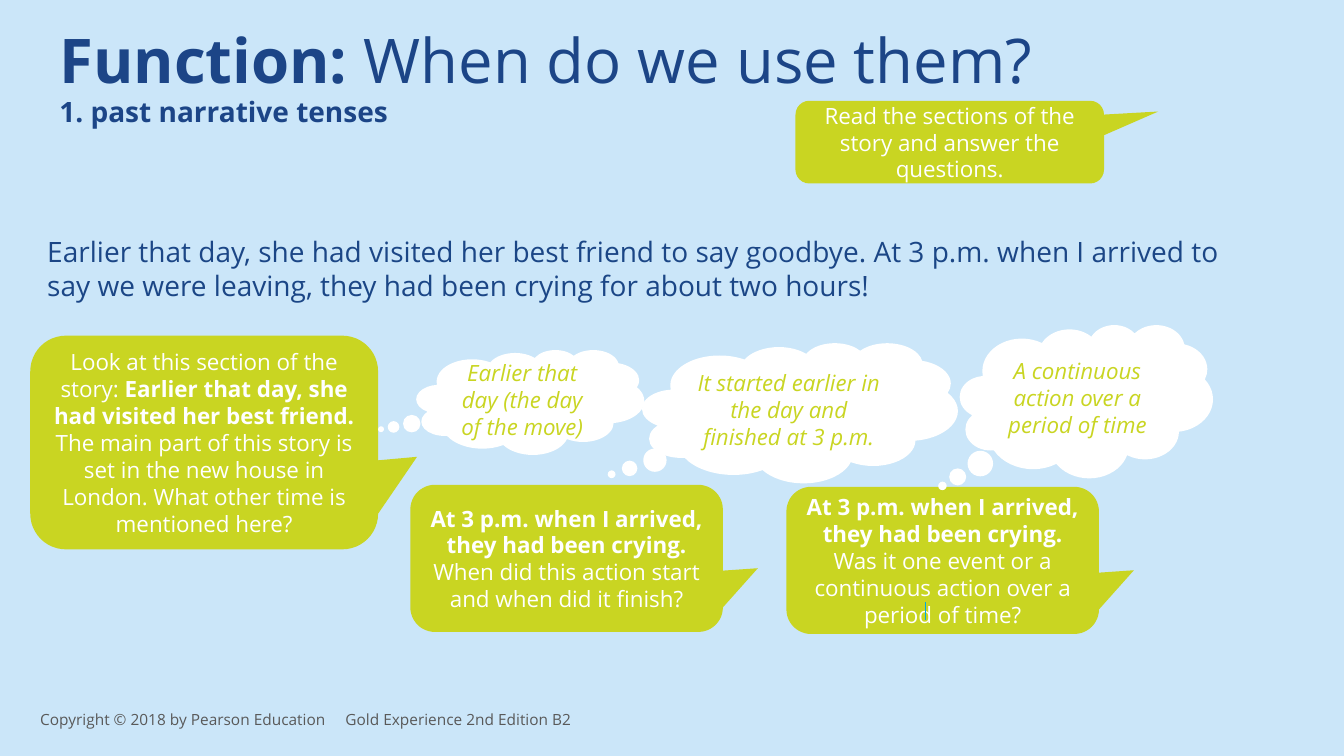
from pptx import Presentation
from pptx.dml.color import RGBColor
from pptx.enum.shapes import MSO_CONNECTOR as Connector, MSO_SHAPE as Shape
from pptx.enum.text import MSO_ANCHOR as Anchor, PP_ALIGN as Align
from pptx.oxml.ns import qn
from pptx.util import Inches, Pt
from lxml import etree

SKY = RGBColor(0xCB, 0xE6, 0xF9)
NAVY = RGBColor(0x1C, 0x45, 0x87)
STORY_BLUE = RGBColor(0x1B, 0x46, 0x86)
LIME = RGBColor(0xC9, 0xD5, 0x22)
WHITE = RGBColor(0xFF, 0xFF, 0xFF)
GREY = RGBColor(0x59, 0x59, 0x59)
CYAN = RGBColor(0x00, 0xA7, 0xE3)

QUESTION_TAIL = (0.612, 0.067, 0.167)
INSTRUCTION_TAIL = (0.676, -0.37, 0.167)
CRYING = ("At 3 p.m. when I arrived, they had been crying.", True)

QUESTIONS = [
    ((0.3, 3.33, 3.45, 2.12), QUESTION_TAIL, [
        ("Look at this section of the story: ", False),
        ("Earlier that day, she had visited her best friend. ", True),
        ("The main part of this story is set in the new house in London. "
         "What other time is mentioned here?", False)]),
    ((4.07, 4.81, 3.1, 1.46), QUESTION_TAIL, [
        CRYING, (" When did this action start and when did it finish?", False)]),
    ((7.8, 4.83, 3.1, 1.46), QUESTION_TAIL, [
        CRYING, (" Was it one event or a continuous action over a period of time?", False)]),
    ((7.89, 1, 3.06, 0.82), INSTRUCTION_TAIL, [
        ("Read the sections of the story and answer the questions.", False)]),
]
ANSWERS = [
    ((4.13, 3.47, 2.26, 1.04), (-0.655, 0.258),
     "Earlier that day (the day of the move)"),
    ((6.37, 3.4, 3.13, 1.39), (-0.597, 0.439),
     "It started earlier in the day and finished at 3 p.m."),
    ((9.52, 3.22, 2.51, 1.52), (-0.569, 0.553),
     "A continuous action over a period of time"),
]


def write(frame, runs, size, color, italic=False, **layout):
    frame.word_wrap = True
    paragraph = frame.paragraphs[0]
    for name, value in layout.items():
        setattr(paragraph, name, value)
    for words, bold in runs:
        run = paragraph.add_run()
        run.text = words
        look = {"name": "Open Sans", "size": Pt(size), "bold": bold, "italic": italic}
        for name, value in look.items():
            setattr(run.font, name, value)
        run.font.color.rgb = color


def add_label(slide, box, runs, size, color, **layout):
    frame = slide.shapes.add_textbox(*map(Inches, box)).text_frame
    write(frame, runs, size, color, **layout)
    return frame


def add_callout(slide, kind, box, tail, fill, runs, color, italic=False):
    callout = slide.shapes.add_shape(kind, *map(Inches, box))
    callout.shadow.inherit = False
    callout.fill.solid()
    callout.fill.fore_color.rgb = fill
    callout.line.fill.background()
    for index, value in enumerate(tail):
        callout.adjustments[index] = value
    callout.text_frame.vertical_anchor = Anchor.MIDDLE
    write(callout.text_frame, runs, 16, color, italic, alignment=Align.CENTER)


def add_heading(slide, left, top):
    add_label(slide, (left, top, 12.24, 1.44),
              [("Function: ", True), ("When do we use them?", False)],
              44, NAVY, line_spacing=0.9)
    add_label(slide, (left, top + 0.68, 10.1, 0.8),
              [("1. past narrative tenses", True)], 20, NAVY, line_spacing=0.9)


def add_story(slide, box):
    add_label(slide, box, [(
        "Earlier that day, she had visited her best friend to say goodbye. "
        "At 3 p.m. when I arrived to say we were leaving, "
        "they had been crying for about two hours!", False)], 20, STORY_BLUE)


def add_footer(slide, box):
    frame = add_label(slide, box, [(
        "Copyright © 2018 by Pearson Education     Gold Experience 2nd Edition B2",
        False)], 11, GREY)
    frame.vertical_anchor = Anchor.MIDDLE
    frame.margin_top = frame.margin_bottom = Inches(0.1)


def add_tick(slide, x, bottom, height):
    tick = slide.shapes.add_connector(
        Connector.STRAIGHT, *map(Inches, (x, bottom, x, bottom - height)))
    tick.line.color.rgb = CYAN
    tick.line.width = Pt(0.75)
    etree.SubElement(tick._element.spPr, qn("a:effectLst"))


def add_dialogue(slide):
    *story_questions, instruction = QUESTIONS
    for (box, tail, runs), (cloud_box, cloud_tail, answer) in zip(story_questions, ANSWERS):
        add_callout(slide, Shape.ROUNDED_RECTANGULAR_CALLOUT, box, tail, LIME, runs, WHITE)
        add_callout(slide, Shape.CLOUD_CALLOUT, cloud_box, cloud_tail, WHITE,
                    [(answer, False)], LIME, italic=True)
    add_tick(slide, 9.18, 6.15, 0.18)
    box, tail, runs = instruction
    add_callout(slide, Shape.ROUNDED_RECTANGULAR_CALLOUT, box, tail, LIME, runs, WHITE)


def main():
    deck = Presentation()
    deck.slide_width, deck.slide_height = Inches(13.33), Inches(7.5)
    slide = deck.slides.add_slide(deck.slide_layouts[6])
    slide.background.fill.solid()
    slide.background.fill.fore_color.rgb = SKY
    add_story(slide, (0.37, 2.28, 11.95, 0.77))
    add_heading(slide, 0.49, 0.25)
    add_footer(slide, (0.3, 6.94, 6.92, 0.4))
    add_dialogue(slide)
    deck.save("out.pptx")


if __name__ == "__main__":
    main()
